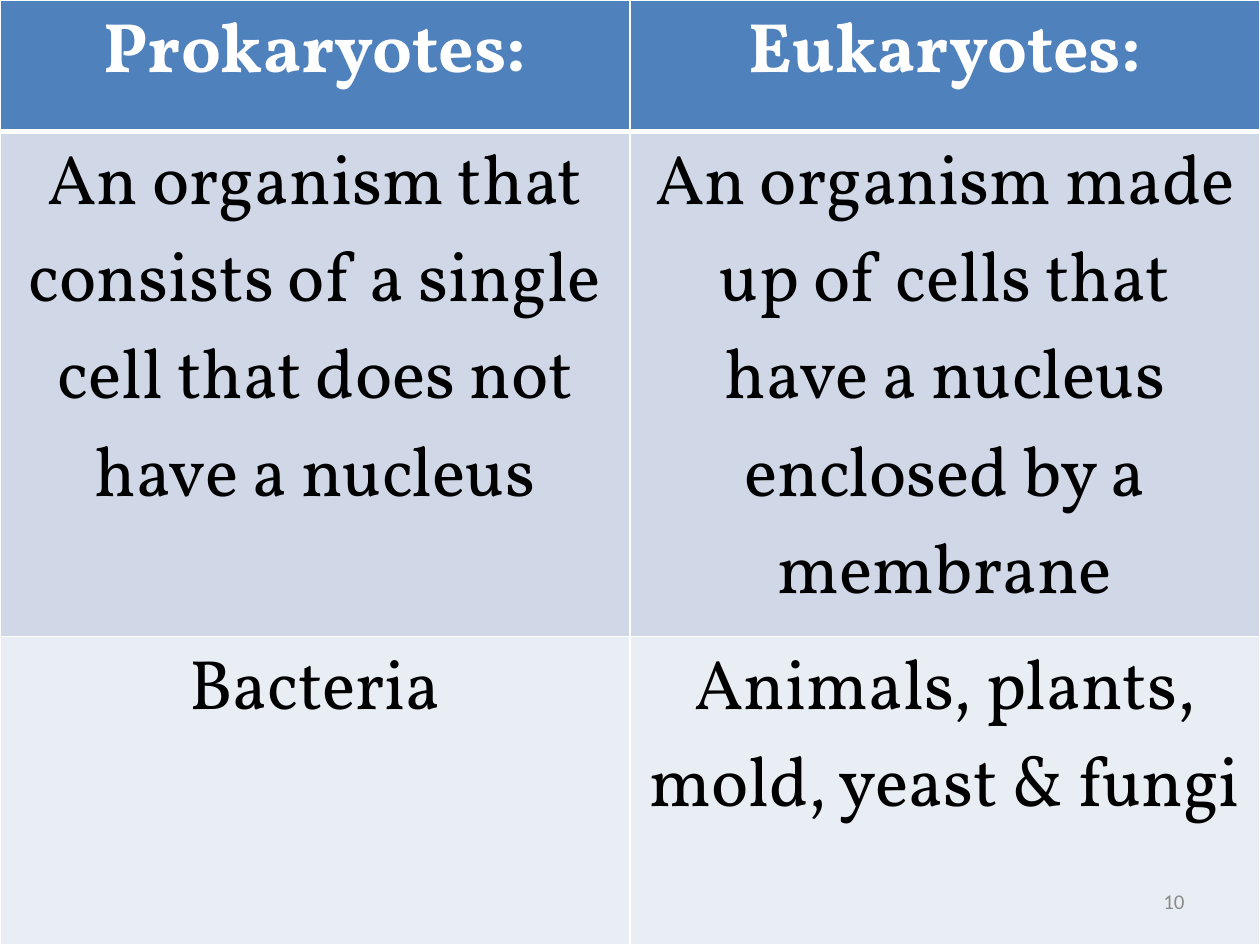
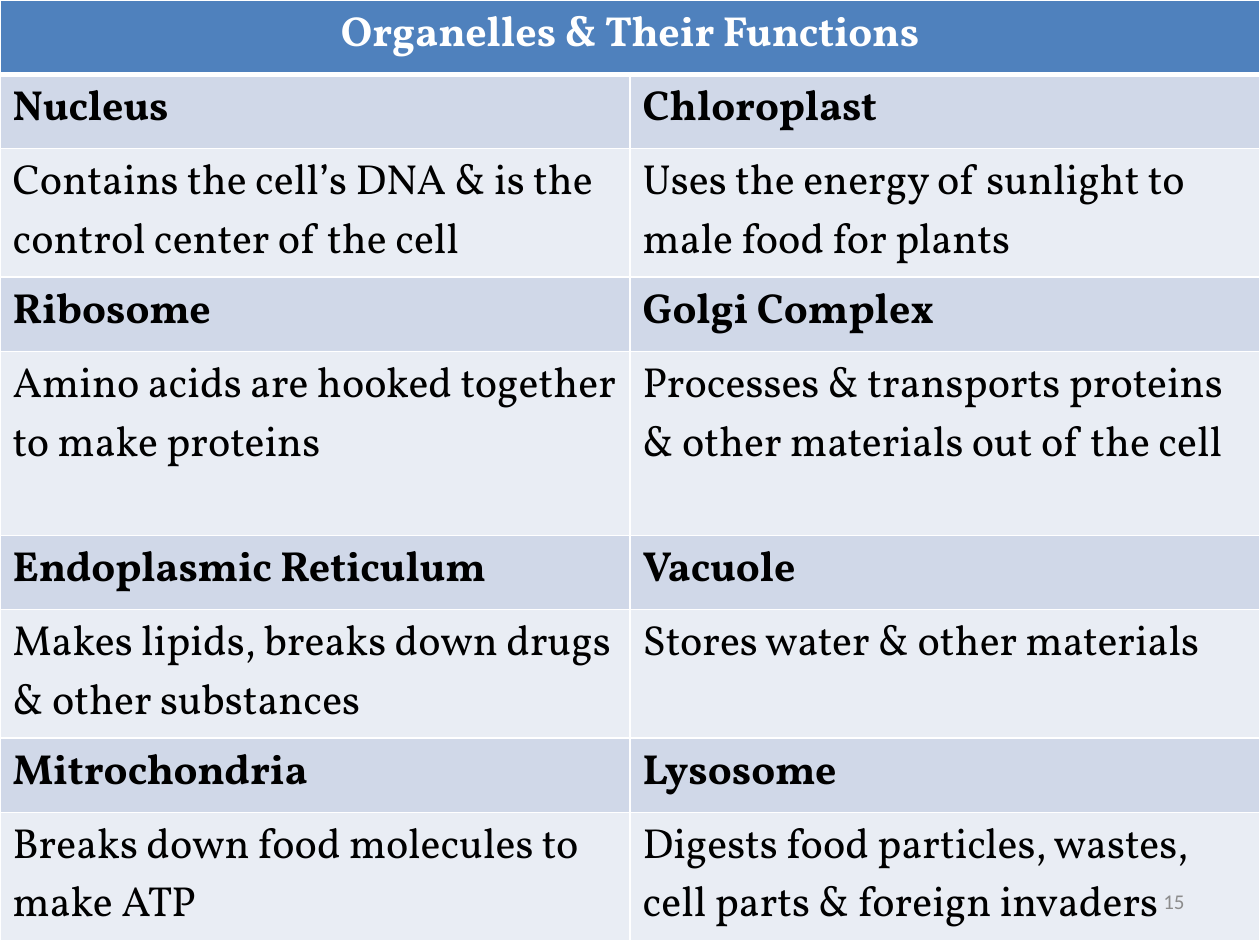
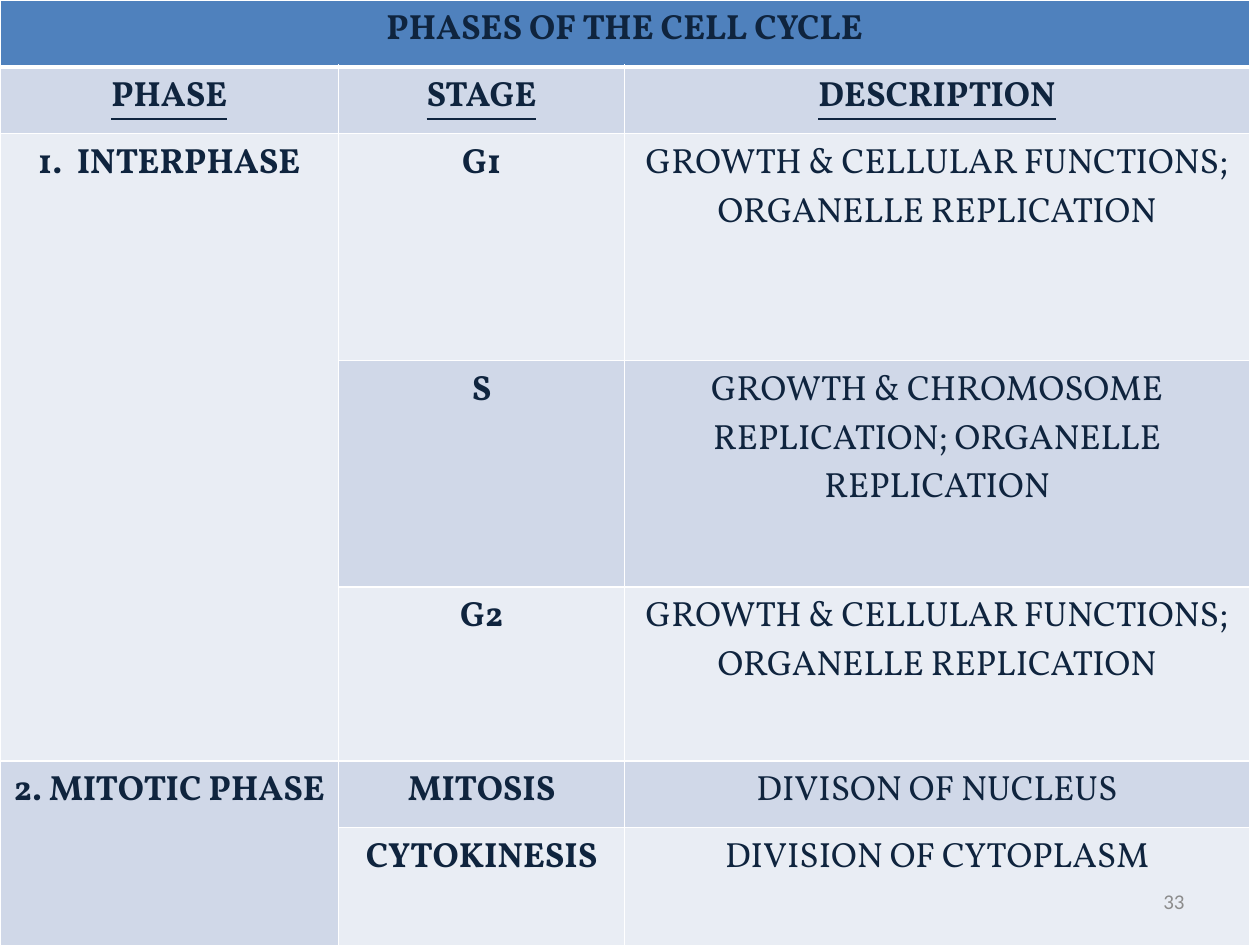
import pptx
import pptx.dml.color
import pptx.enum.text
import pptx.oxml
import pptx.oxml.ns
import pptx.util

Pt = pptx.util.Pt
ALIGN = pptx.enum.text.PP_ALIGN
SLIDE_SIZE = (720, 540)
BLUE, BAND_DARK, BAND_LIGHT = "4F81BD", "D0D8E8", "E9EDF4"
WHITE, BLACK, NAVY, GREY = "FFFFFF", "000000", "0F243E", "8C8C8C"
BODY_FONT, NUMBER_FONT = "Vollkorn", "Calibri"
PAGE_NUMBER_BOX = (516, 500.5, 168, 28.75)

KINGDOMS = [
    ["Prokaryotes:", "Eukaryotes:"],
    ["An organism that consists of a single cell that does not have a nucleus",
     "An organism made up of cells that have a nucleus enclosed by a membrane"],
    ["Bacteria", "Animals, plants, mold, yeast & fungi"],
]
ORGANELLES = [
    ["Organelles & Their Functions", None],
    ["Nucleus", "Chloroplast"],
    ["Contains the cell’s DNA & is the control center of the cell",
     "Uses the energy of sunlight to male food for plants"],
    ["Ribosome", "Golgi Complex"],
    ["Amino acids are hooked together to make proteins",
     "Processes & transports proteins & other materials out of the cell"],
    ["Endoplasmic Reticulum", "Vacuole"],
    ["Makes lipids, breaks down drugs & other substances",
     "Stores water & other materials"],
    ["Mitrochondria", "Lysosome"],
    ["Breaks down food molecules to make ATP",
     "Digests food particles, wastes, cell parts & foreign invaders"],
]
GAP_PHASE = "GROWTH & CELLULAR FUNCTIONS; ORGANELLE REPLICATION"
CELL_CYCLE = [
    ["PHASES OF THE CELL CYCLE", None, None],
    ["PHASE", "STAGE", "DESCRIPTION"],
    [" INTERPHASE", "G1", GAP_PHASE],
    [None, "S", "GROWTH & CHROMOSOME REPLICATION; ORGANELLE REPLICATION"],
    [None, "G2", GAP_PHASE],
    ["2. MITOTIC PHASE", "MITOSIS", "DIVISON OF NUCLEUS"],
    [None, "CYTOKINESIS", "DIVISION OF CYTOPLASM"],
]


def rgb(color):
    return pptx.dml.color.RGBColor.from_string(color)


def add_run(paragraph, text, size, color, font=BODY_FONT, bold=False):
    run = paragraph.add_run()
    run.text = text
    run.font.size, run.font.name, run.font.bold = Pt(size), font, bold
    run.font.color.rgb = rgb(color)
    return run


def set_borders(cell, top, bottom):
    """Draw white borders, 1 pt wide at the sides."""
    properties = cell._tc.get_or_add_tcPr()
    for side, width in (("L", 1), ("R", 1), ("T", top), ("B", bottom)):
        properties.append(pptx.oxml.parse_xml(
            f'<a:ln{side} {pptx.oxml.ns.nsdecls("a")} w="{Pt(width)}">'
            f'<a:solidFill><a:srgbClr val="{WHITE}"/></a:solidFill></a:ln{side}>'))


def number_paragraph(paragraph, indent=18):
    properties = paragraph._p.get_or_add_pPr()
    properties.set("marL", str(Pt(indent)))
    properties.set("indent", str(-Pt(indent)))
    properties.append(pptx.oxml.parse_xml(
        f'<a:buAutoNum {pptx.oxml.ns.nsdecls("a")} type="arabicPeriod"/>'))


def add_banded_table(slide, box, texts, widths, heights, size, is_bold,
                     header_color=WHITE, body_color=BLACK, body_align=ALIGN.CENTER,
                     spans=()):
    """Fill box with a blue header row and alternating bands; return the table."""
    frame = slide.shapes.add_table(len(texts), len(widths), *map(Pt, box))
    table = frame.table
    for column, width in zip(table.columns, widths):
        column.width = Pt(width)
    for row, height in zip(table.rows, heights):
        row.height = Pt(height)
    for r, row_texts in enumerate(texts):
        for c, text in enumerate(row_texts):
            cell = table.cell(r, c)
            set_borders(cell, top=3 if r == 1 else 1, bottom=3 if r == 0 else 1)
            cell.fill.solid()
            band = BAND_DARK if r % 2 else BAND_LIGHT
            cell.fill.fore_color.rgb = rgb(band if r else BLUE)
            if text is None:
                continue
            paragraph = cell.text_frame.paragraphs[0]
            paragraph.alignment = body_align if r else ALIGN.CENTER
            add_run(paragraph, text, size, body_color if r else header_color,
                    bold=r == 0 or is_bold(r, c))
    for first, last in spans:
        table.cell(*first).merge(table.cell(*last))
    return table


def add_page_number(slide, box, number):
    frame = slide.shapes.add_textbox(*map(Pt, box)).text_frame
    frame.word_wrap = True
    frame.vertical_anchor = pptx.enum.text.MSO_ANCHOR.MIDDLE
    paragraph = frame.paragraphs[0]
    paragraph.alignment = ALIGN.RIGHT
    add_run(paragraph, str(number), 12, GREY, NUMBER_FONT)


def build_kingdoms(slide, box):
    add_banded_table(slide, box, KINGDOMS, [box[2] / 2] * 2, [75, 288.6, 176.4], 40,
                     is_bold=lambda r, c: False)


def build_organelles(slide, box):
    name, function, tall_function = 42.5, 73.4, 105
    heights = [name, name, function, name, tall_function,
               name, function, name, function]
    add_banded_table(slide, box, ORGANELLES, [box[2] / 2] * 2, heights, 24,
                     is_bold=lambda r, c: r % 2 == 1, body_align=ALIGN.LEFT,
                     spans=[((0, 0), (0, 1))])


def build_cell_cycle(slide, box):
    table = add_banded_table(
        slide, (*box[:2], 714, 541.4), CELL_CYCLE, [193.5, 163.5, 357],
        [38.2, 38.2, 129.6, 129.6, 99.2, 38.2, 68.4], 20,
        is_bold=lambda r, c: r == 1 or c < 2, header_color=NAVY, body_color=NAVY,
        spans=[((0, 0), (0, 2)), ((2, 0), (4, 0)), ((5, 0), (6, 0))])
    for c in range(3):
        table.cell(1, c).text_frame.paragraphs[0].runs[0].font.underline = True
    number_paragraph(table.cell(2, 0).text_frame.paragraphs[0])


def main():
    deck = pptx.Presentation()
    deck.slide_width, deck.slide_height = map(Pt, SLIDE_SIZE)
    for build, number in ((build_kingdoms, 10), (build_organelles, 15),
                          (build_cell_cycle, 33)):
        slide = deck.slides.add_slide(deck.slide_layouts[6])
        build(slide, (0, 0, *SLIDE_SIZE))
        add_page_number(slide, PAGE_NUMBER_BOX, number)
    deck.save("out.pptx")


if __name__ == "__main__":
    main()
